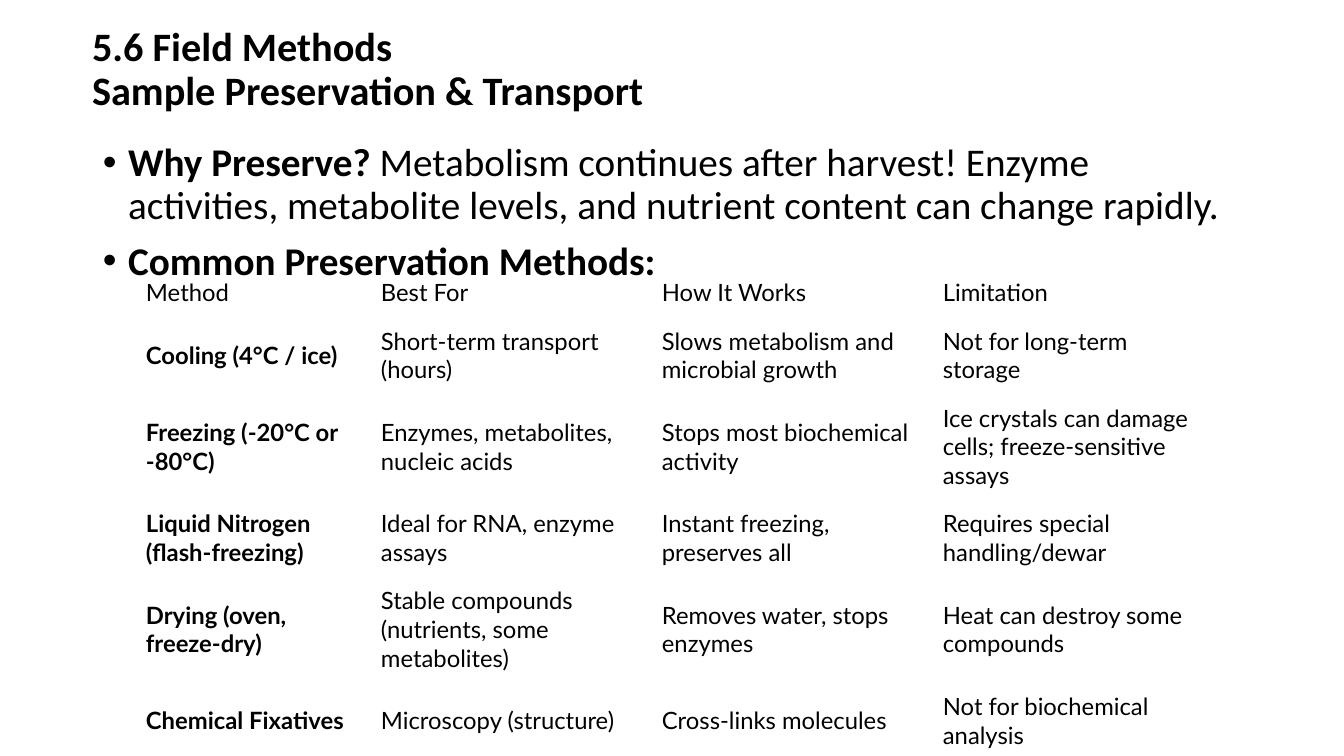
"""Build the slide on sample preservation and transport methods."""
import pptx
import pptx.dml.color
import pptx.enum.text
import pptx.oxml.ns
import pptx.util
from lxml import etree

BLACK = pptx.dml.color.RGBColor(0, 0, 0)
PX = 914400 / 100.8
MIDDLE = pptx.enum.text.MSO_ANCHOR.MIDDLE


def px(*lengths):
    return [pptx.util.Emu(round(length * PX)) for length in lengths]


def style(run, face, size, bold):
    run.font.name = face
    run.font.size = pptx.util.Pt(size)
    run.font.bold = bold
    run.font.color.rgb = BLACK


deck = pptx.Presentation()
deck.slide_width, deck.slide_height = px(1344, 756)
slide = deck.slides.add_slide(deck.slide_layouts[5])

title = slide.shapes.title
title.left, title.top, title.width, title.height = px(82, 24, 1159, 93)
title.text_frame.text = "5.6 Field Methods \vSample Preservation & Transport"
title.text_frame.vertical_anchor = MIDDLE
title.text_frame.word_wrap = True
title.text_frame.auto_size = pptx.enum.text.MSO_AUTO_SIZE.NONE
heading = title.text_frame.paragraphs[0]
heading.alignment = pptx.enum.text.PP_ALIGN.LEFT
heading.line_spacing = 0.9
for run in heading.runs:
    style(run, "Calibri", 28.8, True)
for line_break in heading._p.findall(pptx.oxml.ns.qn("a:br")):
    etree.SubElement(line_break, pptx.oxml.ns.qn("a:rPr"), sz="2880", b="1")

POINTS = [
    [("Why Preserve?", True),
     ("\u00a0Metabolism continues after harvest! Enzyme activities, metabolite levels, "
      "and nutrient content can change rapidly.", False)],
    [("Common Preservation Methods:", True)],
]
reasons = slide.shapes.add_textbox(*px(93, 138, 1159, 480)).text_frame
reasons.word_wrap = True
for index, point in enumerate(POINTS):
    paragraph = reasons.add_paragraph() if index else reasons.paragraphs[0]
    properties = paragraph._p.get_or_add_pPr()
    properties.set("marL", "228600")
    properties.set("indent", "-228600")
    etree.SubElement(properties, pptx.oxml.ns.qn("a:buFont"), typeface="Arial")
    etree.SubElement(properties, pptx.oxml.ns.qn("a:buChar"), char="•")
    paragraph.line_spacing = 0.9
    if index:
        paragraph.space_before = pptx.util.Pt(10)
    for words, bold in point:
        run = paragraph.add_run()
        run.text = words
        style(run, "Calibri", 28, bold)

METHODS = [
    ("Method", "Best For", "How It Works", "Limitation"),
    ("Cooling (4°C / ice)", "Short-term transport (hours)",
     "Slows metabolism and microbial growth", "Not for long-term storage"),
    ("Freezing (-20°C or -80°C)", "Enzymes, metabolites, nucleic acids",
     "Stops most biochemical activity",
     "Ice crystals can damage cells; freeze-sensitive assays"),
    ("Liquid Nitrogen (flash-freezing)", "Ideal for RNA, enzyme assays",
     "Instant freezing, preserves all", "Requires special handling/dewar"),
    ("Drying (oven, freeze-dry)", "Stable compounds (nutrients, some metabolites)",
     "Removes water, stops enzymes", "Heat can destroy some compounds"),
    ("Chemical Fixatives", "Microscopy (structure)",
     "Cross-links molecules", "Not for biochemical analysis"),
]
COLUMN_WIDTHS = px(229, 281, 281, 281)
ROW_HEIGHTS = px(47, 75, 103, 75, 103, 75)
methods = slide.shapes.add_table(
    len(METHODS), len(COLUMN_WIDTHS), *px(137, 268),
    sum(COLUMN_WIDTHS), sum(ROW_HEIGHTS)).table
methods.first_row = False
methods.horz_banding = False
for column, width in zip(methods.columns, COLUMN_WIDTHS):
    column.width = width
for row, height in zip(methods.rows, ROW_HEIGHTS):
    row.height = height
for r, entries in enumerate(METHODS):
    for c, entry in enumerate(entries):
        cell = methods.cell(r, c)
        cell_properties = cell._tc.get_or_add_tcPr()
        for side in ("a:lnL", "a:lnR", "a:lnT", "a:lnB"):
            border = etree.SubElement(cell_properties, pptx.oxml.ns.qn(side), w="0")
            etree.SubElement(border, pptx.oxml.ns.qn("a:noFill"))
        cell.fill.background()
        cell.vertical_anchor = MIDDLE
        cell.margin_left, cell.margin_right = px(9 if c == 0 else 15, 9 if r and c == 3 else 15)
        cell.margin_top, cell.margin_bottom = px(10, 10)
        cell.text_frame.text = entry
        style(cell.text_frame.paragraphs[0].runs[0], "Lato", 17, r > 0 and c == 0)

deck.save("out.pptx")
